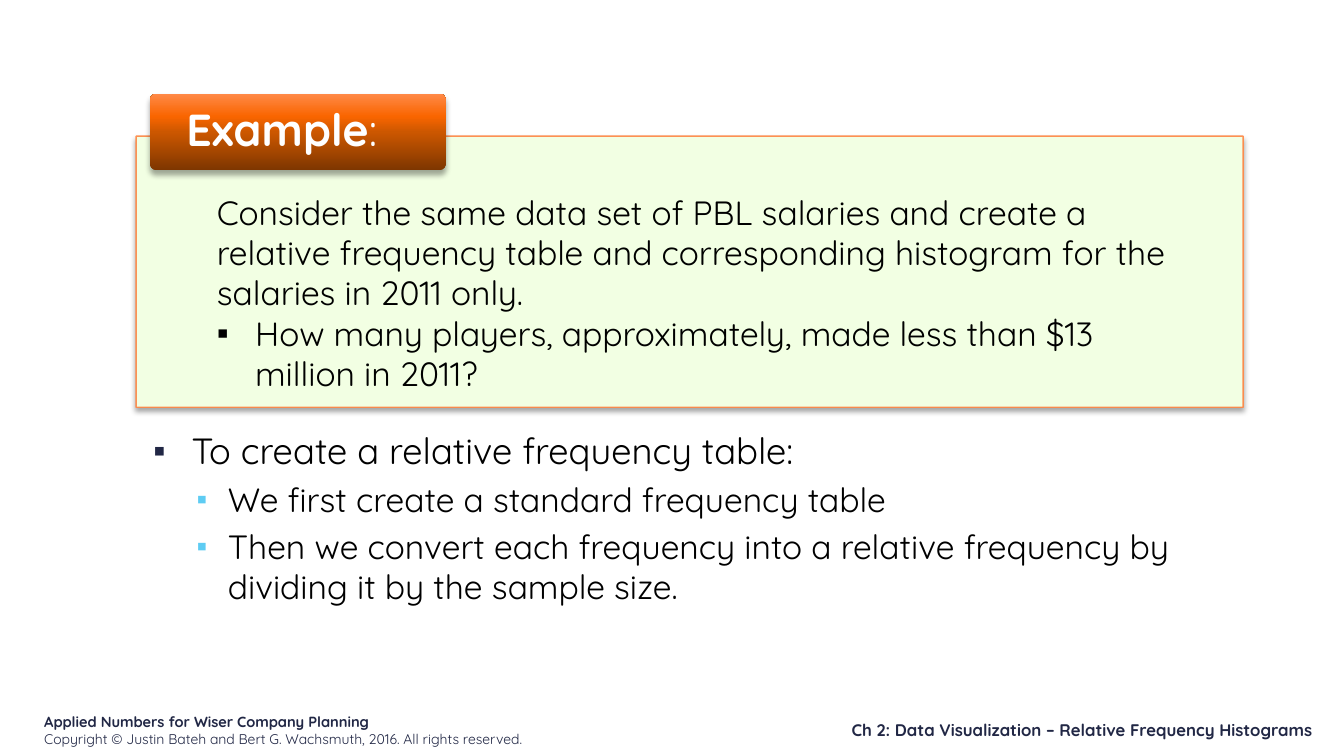
from lxml.etree import SubElement
from pptx import Presentation
from pptx.dml.color import RGBColor
from pptx.enum.shapes import MSO_SHAPE
from pptx.enum.text import MSO_ANCHOR, MSO_AUTO_SIZE, PP_ALIGN
from pptx.oxml import parse_xml
from pptx.oxml.ns import nsdecls, qn
from pptx.util import Inches, Pt

FONT = "Quicksand"
COLORS = {"navy": "212745", "sky": "5ECCF3", "black": "000000", "white": "FFFFFF",
          "mint": "F2FFE3", "orange": "FF8643"}
LABEL_STOPS = [(0, "7E3600"), (50, "CC5700"), (70, "F96500"), (100, "FF8947")]

CARD_TEXT = [
    "Consider the same data set of PBL salaries and create a relative frequency table "
    "and corresponding histogram for the salaries in 2011 only.",
    "How many players, approximately, made less than $13 million in 2011?",
]
STEPS = [
    (0, "To create a relative frequency table:"),
    (1, "We first create a standard frequency table"),
    (1, "Then we convert each frequency into a relative frequency by dividing it by the sample size."),
]
STEP_LEVELS = [
    {"size": 26, "left": 0.45, "hang": 0.38, "before": 7, "color": "navy", "scale": 95},
    {"size": 24, "left": 0.81, "hang": 0.31, "before": 4.8, "color": "sky", "scale": 90},
]
BOOK = "Applied Numbers for Wiser Company Planning"
COPYRIGHT = "Copyright © Justin Bateh and Bert G. Wachsmuth, 2016. All rights reserved."
CHAPTER = "Ch 2: Data Visualization – Relative Frequency Histograms"

CARD = (1.35, 1.35, 10.98, 2.69)
LABEL = (1.49, 0.93, 2.93, 0.76)
BODY = (1.35, 4.2, 10.75, 2)
BOOK_BOX = (0.34, 7.02, 5.28, 0.4)
CHAPTER_BOX = (6.5, 7.09, 6.62, 0.3)


def rgb(name):
    return RGBColor.from_string(COLORS[name])


def box(at):
    return [Inches(v) for v in at]


def style(r, size, color, bold=False):
    r.font.name = FONT
    r.font.size = Pt(size)
    r.font.bold = bold
    r.font.color.rgb = rgb(color)


def set_frame(tf, anchor=MSO_ANCHOR.TOP, margins=(0.1, 0.05, 0.1, 0.05)):
    tf.word_wrap = True
    tf.auto_size = MSO_AUTO_SIZE.NONE
    tf.vertical_anchor = anchor
    tf.margin_left, tf.margin_top, tf.margin_right, tf.margin_bottom = box(margins)


def add_bullet(p, left, hang, color, scale=100):
    pPr = p._p.get_or_add_pPr()
    pPr.set("marL", str(Inches(left)))
    pPr.set("indent", str(-Inches(hang)))
    clr = SubElement(pPr, qn("a:buClr"))
    SubElement(clr, qn("a:srgbClr"), val=COLORS[color])
    SubElement(pPr, qn("a:buSzPct"), val=str(scale * 1000))
    SubElement(pPr, qn("a:buFont"), typeface="Arial")
    SubElement(pPr, qn("a:buChar"), char="▪")


def add_panel(slide, kind, at):
    sp = slide.shapes.add_shape(kind, *box(at))
    sp.shadow.inherit = False
    effects = sp._element.spPr.find(qn("a:effectLst"))
    effects.append(parse_xml(
        f'<a:outerShdw {nsdecls("a")} blurRad="{Pt(4)}" dist="{Pt(3)}" dir="5400000" rotWithShape="0">'
        f'<a:srgbClr val="{COLORS["black"]}"><a:alpha val="35000"/></a:srgbClr></a:outerShdw>'))
    return sp


def add_card(slide):
    sp = add_panel(slide, MSO_SHAPE.RECTANGLE, CARD)
    sp.fill.solid()
    sp.fill.fore_color.rgb = rgb("mint")
    sp.line.color.rgb = rgb("orange")
    sp.line.width = Pt(1)
    line_color = sp.line._ln.find(".//" + qn("a:srgbClr"))
    SubElement(line_color, qn("a:alpha"), val="90000")
    tf = sp.text_frame
    set_frame(tf, margins=(0.8, 0.55, 0.6, 0.22))
    for i, text in enumerate(CARD_TEXT):
        p = tf.add_paragraph() if i else tf.paragraphs[0]
        p.text = text
        p.alignment = PP_ALIGN.LEFT
        style(p.runs[0], 24, "black")
    add_bullet(tf.paragraphs[1], 0.38, 0.38, "black")


def add_label(slide):
    sp = add_panel(slide, MSO_SHAPE.ROUNDED_RECTANGLE, LABEL)
    sp.adjustments[0] = 0.08
    sp.line.fill.background()
    stops = "".join(
        f'<a:gs pos="{pos * 1000}"><a:srgbClr val="{color}"/></a:gs>'
        for pos, color in LABEL_STOPS)
    sp._element.spPr.find(qn("a:prstGeom")).addnext(parse_xml(
        f'<a:gradFill {nsdecls("a")} rotWithShape="1"><a:gsLst>{stops}</a:gsLst>'
        '<a:lin ang="16200000" scaled="0"/></a:gradFill>'))
    tf = sp.text_frame
    set_frame(tf, MSO_ANCHOR.MIDDLE, (0.34, 0.04, 0.34, 0.04))
    p = tf.paragraphs[0]
    p.alignment = PP_ALIGN.LEFT
    p.line_spacing = 0.9
    for text, bold in (("Example", True), (":", False)):
        r = p.add_run()
        r.text = text
        style(r, 32, "white", bold)


def fill_body(sp):
    sp.left, sp.top, sp.width, sp.height = box(BODY)
    tf = sp.text_frame
    set_frame(tf)
    for i, (level, text) in enumerate(STEPS):
        look = STEP_LEVELS[level]
        p = tf.add_paragraph() if i else tf.paragraphs[0]
        p.text = text
        p.level = level
        p.space_before = Pt(look["before"])
        add_bullet(p, look["left"], look["hang"], look["color"], look["scale"])
        style(p.runs[0], look["size"], "black")


def add_footer(slide, at, lines, align, anchor):
    tf = slide.shapes.add_textbox(*box(at)).text_frame
    set_frame(tf, anchor)
    for i, (text, size, bold) in enumerate(lines):
        p = tf.add_paragraph() if i else tf.paragraphs[0]
        p.text = text
        p.alignment = align
        style(p.runs[0], size, "navy", bold)


def main():
    prs = Presentation()
    prs.slide_width, prs.slide_height = Inches(13.33), Inches(7.5)
    slide = prs.slides.add_slide(prs.slide_layouts[1])
    title = slide.shapes.title._element
    title.getparent().remove(title)
    add_footer(slide, BOOK_BOX, [(BOOK, 10.5, True), (COPYRIGHT, 10, False)],
               PP_ALIGN.LEFT, MSO_ANCHOR.TOP)
    add_card(slide)
    add_label(slide)
    add_footer(slide, CHAPTER_BOX, [(CHAPTER, 12, True)], PP_ALIGN.RIGHT, MSO_ANCHOR.BOTTOM)
    fill_body(slide.placeholders[1])
    prs.save("out.pptx")


if __name__ == "__main__":
    main()
